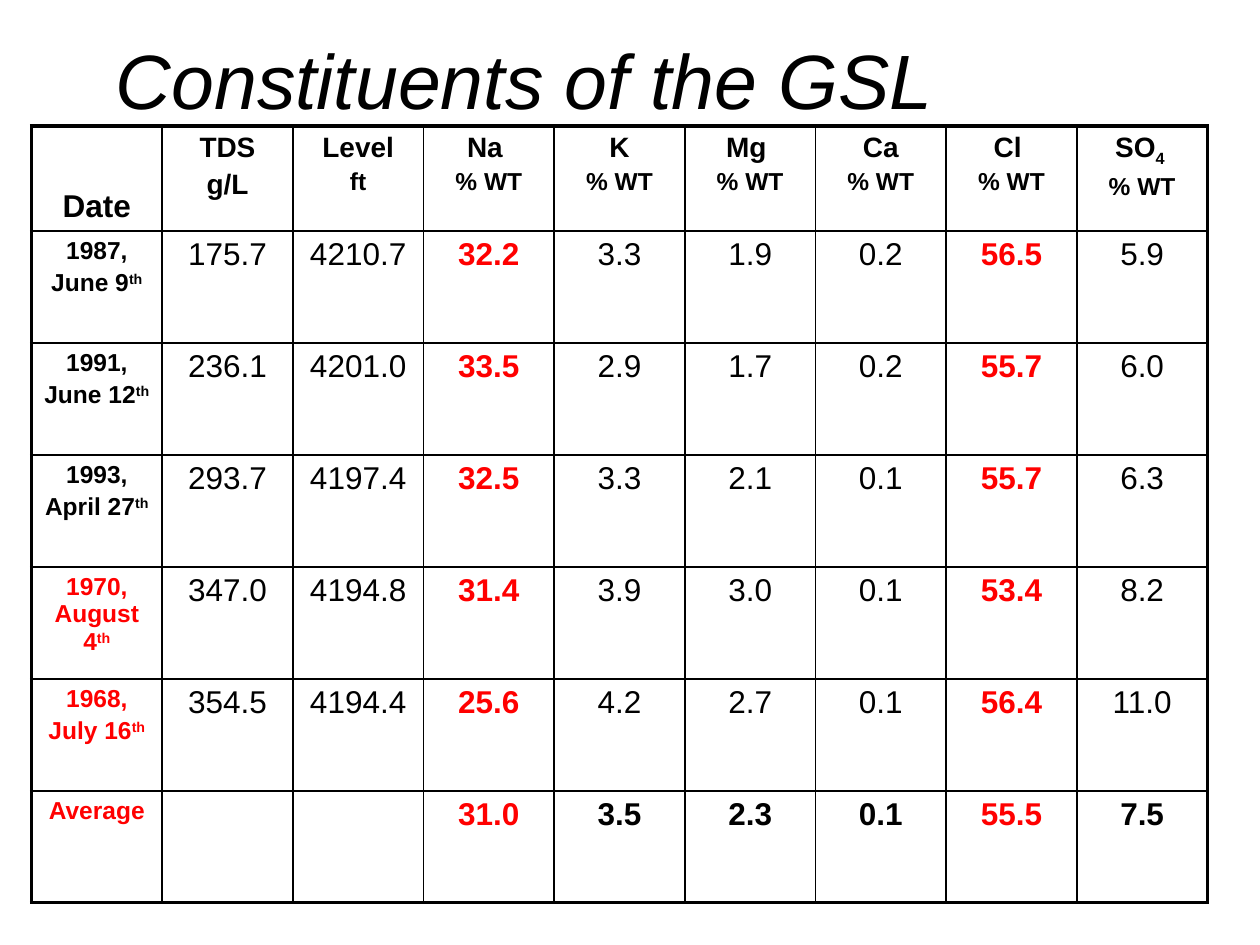
"""Build the slide tabulating the constituents of the GSL by date."""
from typing import NamedTuple

from lxml.etree import SubElement
from pptx import Presentation
from pptx.dml.color import RGBColor
from pptx.enum.text import MSO_ANCHOR as Anchor, PP_ALIGN as Align
from pptx.oxml.ns import qn
from pptx.util import Pt

BLACK = RGBColor(0x00, 0x00, 0x00)
RED = RGBColor(0xFF, 0x00, 0x00)
FONT = "Arial"
THIN, THICK = 1, 2.25
TABLE_WIDTH, HEADER_HEIGHT, ROW_HEIGHT = 672, 60, 64


class Line(NamedTuple):
    text: str
    size: float
    script: str = ""
    baseline: int = 0


class Sample(NamedTuple):
    date: tuple[Line, ...]
    date_color: RGBColor
    values: tuple[str, ...]
    bold: bool = False


def dated(year: str, day: str) -> tuple[Line, ...]:
    return Line(year, 14), Line(day, 14, "th", 30000)


PERCENT = Line("% WT", 14)
HEADERS = (
    (Line("Date", 18),),
    (Line("TDS", 16), Line("g/L", 16)),
    (Line("Level", 16), Line("ft", 14)),
    *((Line(element, 16), PERCENT) for element in ("Na ", "K", "Mg ", "Ca", "Cl ")),
    (Line("SO", 16, "4 ", -25000), PERCENT),
)
SAMPLES = (
    Sample(dated("1987,", "June 9"), BLACK,
           ("175.7", "4210.7", "32.2", "3.3", "1.9", "0.2", "56.5", "5.9")),
    Sample(dated("1991,", "June 12"), BLACK,
           ("236.1", "4201.0", "33.5", "2.9", "1.7", "0.2", "55.7", "6.0")),
    Sample(dated("1993,", "April 27"), BLACK,
           ("293.7", "4197.4", "32.5", "3.3", "2.1", "0.1", "55.7", "6.3")),
    Sample((Line("1970, August 4", 14, "th", 30000),), RED,
           ("347.0", "4194.8", "31.4", "3.9", "3.0", "0.1", "53.4", "8.2")),
    Sample(dated("1968,", "July 16"), RED,
           ("354.5", "4194.4", "25.6", "4.2", "2.7", "0.1", "56.4", "11.0")),
    Sample((Line("Average", 14),), RED,
           ("", "", "31.0", "3.5", "2.3", "0.1", "55.5", "7.5"), True),
)
HIGHLIGHTED = (2, 6)


def style(font, size: float, color: RGBColor, bold: bool = False) -> None:
    font.name, font.size, font.bold = FONT, Pt(size), bold
    font.color.rgb = color


def write(cell, lines: tuple[Line, ...], color: RGBColor, bold: bool) -> None:
    frame = cell.text_frame
    frame.text = "\n".join(line.text for line in lines)
    for index, (paragraph, line) in enumerate(zip(frame.paragraphs, lines)):
        paragraph.alignment = Align.CENTER
        if index:
            paragraph.space_before = Pt(round(line.size * 0.2, 1))
        if line.script:
            script = paragraph.add_run()
            script.text = line.script
            script.font._element.set("baseline", str(line.baseline))
        for run in paragraph.runs:
            style(run.font, line.size, color, bold)


def set_borders(cell, widths: dict[str, float]) -> None:
    properties = cell._tc.get_or_add_tcPr()
    for side, width in widths.items():
        border = SubElement(properties, qn(f"a:ln{side}"), w=str(Pt(width)))
        fill = SubElement(border, qn("a:solidFill"))
        SubElement(fill, qn("a:srgbClr"), val=str(BLACK))


def add_title(slide) -> None:
    title = slide.shapes.add_textbox(Pt(0), Pt(6), Pt(600), Pt(78)).text_frame
    title.word_wrap = True
    title.vertical_anchor = Anchor.MIDDLE
    title.text = "Constituents of the GSL"
    heading = title.paragraphs[0]
    heading.alignment = Align.CENTER
    style(heading.runs[0].font, 44, BLACK)
    heading.runs[0].font.italic = True


def add_constituents(slide) -> None:
    row_count, column_count = len(SAMPLES) + 1, len(HEADERS)
    table = slide.shapes.add_table(
        row_count, column_count, Pt(18), Pt(72),
        Pt(TABLE_WIDTH), Pt(HEADER_HEIGHT + ROW_HEIGHT * len(SAMPLES))).table
    table.first_row = table.horz_banding = False
    for column in table.columns:
        column.width = Pt(TABLE_WIDTH / column_count)
    for index, row in enumerate(table.rows):
        row.height = Pt(ROW_HEIGHT if index else HEADER_HEIGHT)
        for position, cell in enumerate(row.cells):
            set_borders(cell, {
                "L": THICK if position == 0 else THIN,
                "R": THICK if position == column_count - 1 else THIN,
                "T": THICK if index == 0 else THIN,
                "B": THICK if index == row_count - 1 else THIN,
            })
            cell.fill.background()

    for position, header in enumerate(HEADERS):
        write(table.cell(0, position), header, BLACK, True)
    table.cell(0, 0).vertical_anchor = Anchor.BOTTOM
    for index, sample in enumerate(SAMPLES, 1):
        write(table.cell(index, 0), sample.date, sample.date_color, True)
        for position, value in enumerate(sample.values):
            highlighted = position in HIGHLIGHTED
            write(table.cell(index, position + 1), (Line(value, 18),),
                  RED if highlighted else BLACK, highlighted or sample.bold)


def main() -> None:
    presentation = Presentation()
    presentation.slide_width, presentation.slide_height = Pt(720), Pt(540)
    slide = presentation.slides.add_slide(presentation.slide_layouts[6])
    add_title(slide)
    add_constituents(slide)
    presentation.save("out.pptx")


if __name__ == "__main__":
    main()
